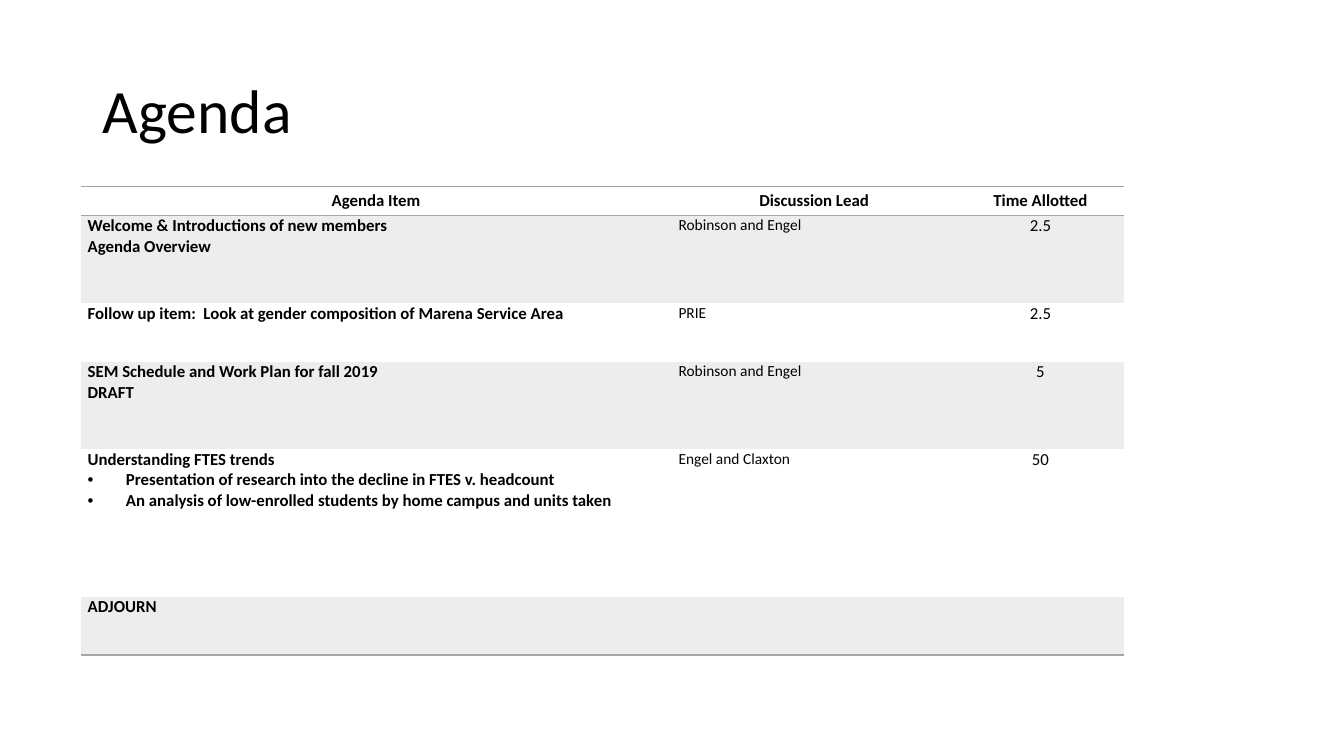
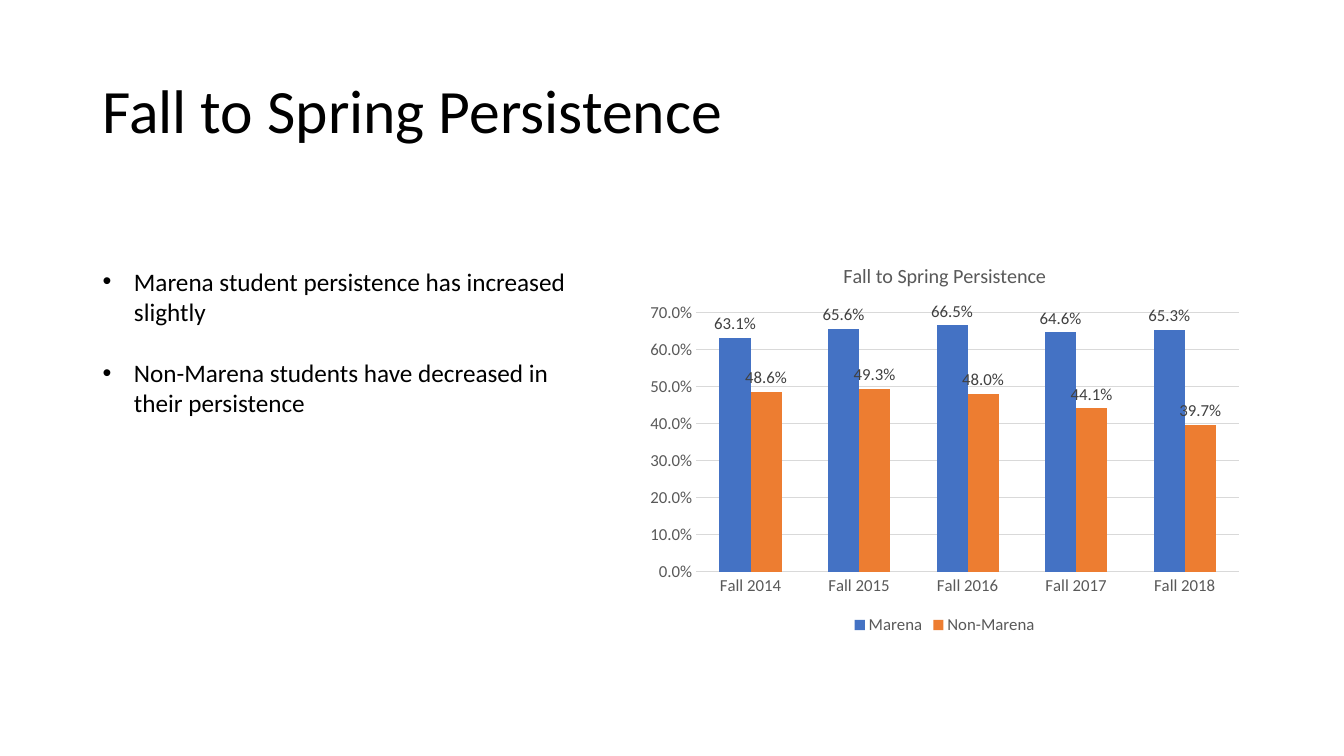
from lxml import etree
from pptx import Presentation
from pptx import util as u
from pptx.chart import data as chart_data
from pptx.dml.color import RGBColor
from pptx.enum import chart as ch, text
from pptx.oxml import ns

PX = 9144
FONT = "Calibri"
BLACK = RGBColor(0x00, 0x00, 0x00)
RULE = RGBColor(0xA5, 0xA5, 0xA5)
BAND = RGBColor(0xED, 0xED, 0xED)
GRID = RGBColor(0xD9, 0xD9, 0xD9)
AXIS_TEXT = RGBColor(0x59, 0x59, 0x59)
LABEL_TEXT = RGBColor(0x40, 0x40, 0x40)
BLUE = RGBColor(0x44, 0x72, 0xC4)
ORANGE = RGBColor(0xED, 0x7D, 0x31)

NO_TABLE_STYLE = "{2D5ABB26-0587-4C30-8999-92F81FD0307C}"
TITLE_AREA = (92, 40, 1150, 145)

TABLE_AREA = (80, 185, 1035, 465)
COLUMN_WIDTHS = (586, 283, 166)
ROW_HEIGHTS = (29, 87, 58, 87, 146, 58)
AGENDA_HEADER = ("Agenda Item", "Discussion Lead", "Time Allotted")
AGENDA_ITEMS = [
    ("Welcome & Introductions of new members\nAgenda Overview", "Robinson and Engel", "2.5"),
    ("Follow up item:  Look at gender composition of Marena Service Area", "PRIE", "2.5"),
    ("SEM Schedule and Work Plan for fall 2019\nDRAFT", "Robinson and Engel", "5"),
    (
        "Understanding FTES trends\n"
        "Presentation of research into the decline in FTES v. headcount\n"
        "An analysis of low-enrolled students by home campus and units taken",
        "Engel and Claxton",
        "50",
    ),
    ("ADJOURN", "", ""),
]
TRENDS_ROW = 4

FINDINGS_AREA = (92, 259, 509, 162)
FINDINGS = [
    "Marena student persistence has increased slightly",
    "Non-Marena students have decreased in their persistence",
]
CHART_AREA = (633, 243, 608, 391)
PERSISTENCE = "Fall to Spring Persistence"
TERMS = ["Fall 2014", "Fall 2015", "Fall 2016", "Fall 2017", "Fall 2018"]
SERIES = [
    ("Marena", (0.631, 0.656, 0.665, 0.646, 0.653), BLUE),
    ("Non-Marena", (0.486, 0.493, 0.48, 0.441, 0.397), ORANGE),
]


def emu(lengths):
    return [length * PX for length in lengths]


def style_font(font, size, color=BLACK, bold=False):
    font.name = FONT
    font.size = u.Pt(size)
    font.bold = bold
    font.color.rgb = color


def style_runs(para, size, bold=False):
    for span in para.runs:
        style_font(span.font, size, bold=bold)


def add_bullet(para, indent):
    props = para._p.get_or_add_pPr()
    props.set("marL", str(indent * PX))
    props.set("indent", str(-indent * PX))
    etree.SubElement(props, ns.qn("a:buFont"), typeface="Arial")
    etree.SubElement(props, ns.qn("a:buChar"), char="•")


def add_border(cell, side):
    line = etree.Element(ns.qn(f"a:{side}"), w=str(u.Pt(1)))
    fill = etree.SubElement(line, ns.qn("a:solidFill"))
    etree.SubElement(fill, ns.qn("a:srgbClr"), val=str(RULE))
    cell._tc.get_or_add_tcPr().insert(0, line)


def add_title_slide(deck, title):
    page = deck.slides.add_slide(deck.slide_layouts[6])
    frame = page.shapes.add_textbox(*emu(TITLE_AREA)).text_frame
    frame.word_wrap = True
    frame.vertical_anchor = text.MSO_ANCHOR.MIDDLE
    frame.text = title
    para = frame.paragraphs[0]
    para.line_spacing = 0.9
    style_runs(para, 44)
    return page


def fill_cell(cell, words, row, column):
    header = row == 0
    cell.margin_left = cell.margin_right = 7 * PX
    cell.margin_top = cell.margin_bottom = 0
    cell.vertical_anchor = text.MSO_ANCHOR.MIDDLE if header else text.MSO_ANCHOR.TOP
    if row % 2:
        cell.fill.solid()
        cell.fill.fore_color.rgb = BAND
    else:
        cell.fill.background()
    if header or row == len(AGENDA_ITEMS):
        add_border(cell, "lnB")
    if header:
        add_border(cell, "lnT")
    cell.text_frame.text = words
    for index, para in enumerate(cell.text_frame.paragraphs):
        if header or column == 2:
            para.alignment = text.PP_ALIGN.CENTER
        style_runs(para, 11 if column == 1 and not header else 12, header or column == 0)
        if row == TRENDS_ROW and index:
            add_bullet(para, 38)


def add_agenda(page):
    rows = [AGENDA_HEADER, *AGENDA_ITEMS]
    table = page.shapes.add_table(len(rows), len(AGENDA_HEADER), *emu(TABLE_AREA)).table
    table._tbl.tblPr.find(ns.qn("a:tableStyleId")).text = NO_TABLE_STYLE
    table.first_row = table.horz_banding = False
    for column, width in zip(table.columns, emu(COLUMN_WIDTHS)):
        column.width = width
    for row, height in zip(table.rows, emu(ROW_HEIGHTS)):
        row.height = height
    for row, items in enumerate(rows):
        for column, words in enumerate(items):
            fill_cell(table.cell(row, column), words, row, column)


def add_findings(page):
    frame = page.shapes.add_textbox(*emu(FINDINGS_AREA)).text_frame
    frame.word_wrap = True
    frame.text = "\n".join(FINDINGS)
    for index, para in enumerate(frame.paragraphs):
        if index:
            para.space_before = u.Pt(22)
        style_runs(para, 18)
        add_bullet(para, 31)


def add_persistence_chart(page):
    data = chart_data.CategoryChartData(number_format="0.0%")
    data.categories = TERMS
    for name, values, _ in SERIES:
        data.add_series(name, values)
    kind = ch.XL_CHART_TYPE.COLUMN_CLUSTERED
    chart = page.shapes.add_chart(kind, *emu(CHART_AREA), data).chart
    style_font(chart.font, 12)

    chart.has_title = True
    chart.chart_title.text_frame.text = PERSISTENCE
    title_span = chart.chart_title.text_frame.paragraphs[0].runs[0]
    style_font(title_span.font, 14.4, AXIS_TEXT)
    chart.chart_title.include_in_layout = False

    chart.has_legend = True
    chart.legend.position = ch.XL_LEGEND_POSITION.BOTTOM
    chart.legend.include_in_layout = False
    style_font(chart.legend.font, 12, AXIS_TEXT)

    for axis in (chart.category_axis, chart.value_axis):
        axis.major_tick_mark = axis.minor_tick_mark = ch.XL_TICK_MARK.NONE
        style_font(axis.tick_labels.font, 12, AXIS_TEXT)
    value_axis = chart.value_axis
    value_axis.minimum_scale, value_axis.maximum_scale, value_axis.major_unit = 0, 0.7, 0.1
    value_axis.tick_labels.number_format = "0.0%"
    value_axis.tick_labels.number_format_is_linked = False
    value_axis.format.line.fill.background()
    for line in (chart.category_axis.format.line, value_axis.major_gridlines.format.line):
        line.color.rgb = GRID
        line.width = u.Pt(0.75)

    plot = chart.plots[0]
    plot.gap_width = 150
    plot.overlap = 0
    plot.vary_by_categories = False
    for series, (_, _, color) in zip(plot.series, SERIES):
        series.format.fill.solid()
        series.format.fill.fore_color.rgb = color
        labels = series.data_labels
        labels.show_value = True
        labels.position = ch.XL_LABEL_POSITION.OUTSIDE_END
        labels.number_format = "0.0%"
        labels.number_format_is_linked = False
        style_font(labels.font, 12, LABEL_TEXT)


def main():
    deck = Presentation()
    deck.slide_width, deck.slide_height = emu((1333, 750))
    add_agenda(add_title_slide(deck, "Agenda"))
    page = add_title_slide(deck, PERSISTENCE)
    add_persistence_chart(page)
    add_findings(page)
    deck.save("out.pptx")


if __name__ == "__main__":
    main()
